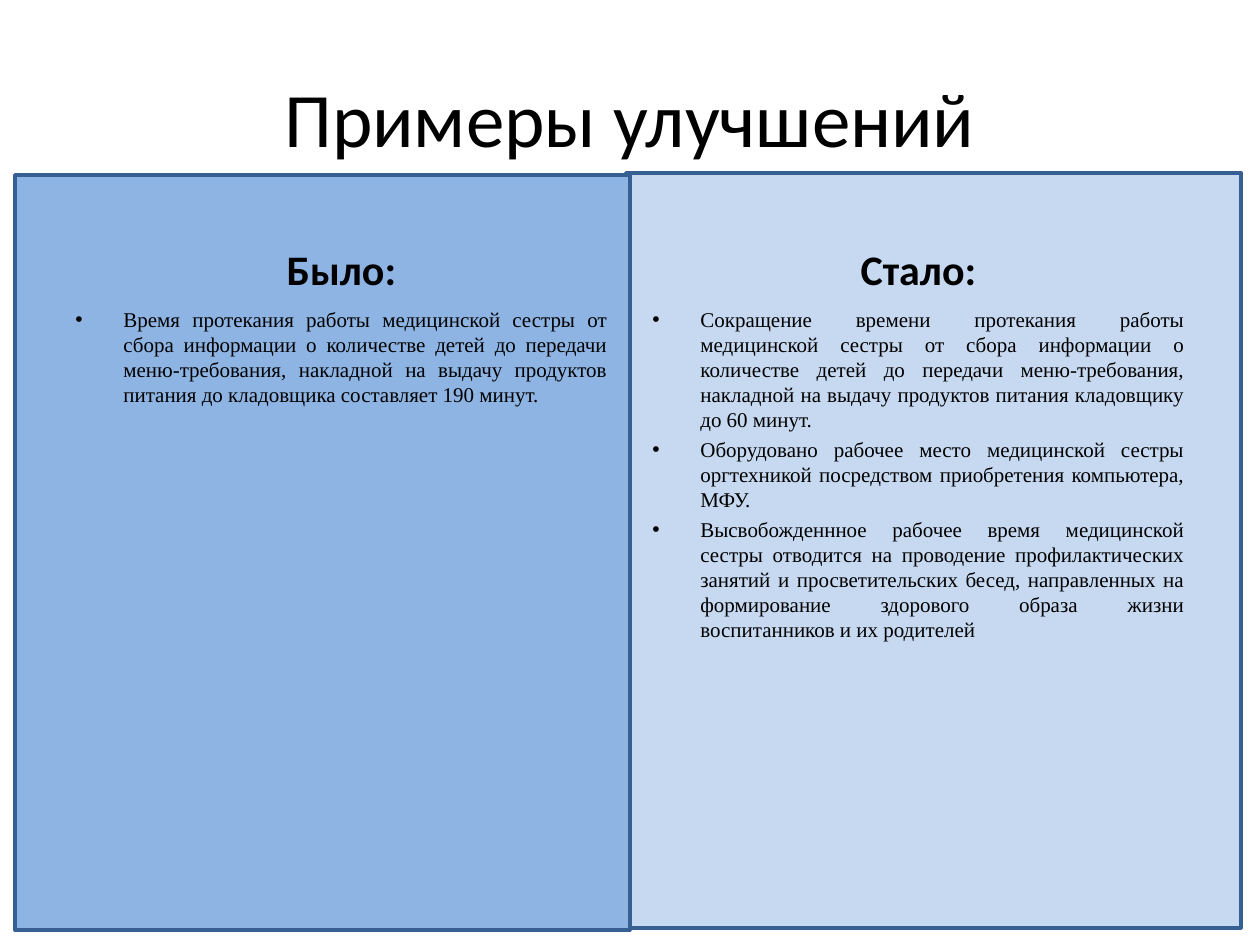
from lxml.etree import SubElement
from pptx import Presentation
from pptx.dml.color import RGBColor
from pptx.enum.shapes import MSO_SHAPE
from pptx.enum.text import MSO_ANCHOR, PP_ALIGN
from pptx.oxml.ns import qn
from pptx.util import Emu, Pt

TITLE = "Примеры улучшений"
PANELS = [
    {"left": 626, "top": 173, "fill": "C6D9F1"},
    {"left": 15, "top": 175, "fill": "8EB4E3"},
]
PANEL_SIZE = (615, 755)
COLUMNS = [
    {
        "left": 63,
        "heading": "Было:",
        "points": [
            "Время протекания работы медицинской сестры от сбора информации о количестве детей до передачи меню-требования, накладной на выдачу продуктов питания до кладовщика составляет 190 минут.",
        ],
    },
    {
        "left": 640,
        "heading": "Стало:",
        "points": [
            "Сокращение времени протекания работы медицинской сестры от сбора информации о количестве детей до передачи меню-требования, накладной на выдачу продуктов питания кладовщику до 60 минут.",
            "Оборудовано рабочее место медицинской сестры оргтехникой посредством приобретения компьютера, МФУ.",
            "Высвобожденнное рабочее время медицинской сестры отводится на проводение профилактических занятий и просветительских бесед, направленных на формирование здорового образа жизни воспитанников и их родителей",
        ],
    },
]
COLUMN_WIDTH = 557
HEADING_TOP, POINTS_TOP, POINTS_HEIGHT = 186, 300, 544
INDENT = 48


def px(length):
    """Turn whole pixels into EMU."""
    return Emu(round(length * 914400 / 126))


def color(value):
    """Turn a hex string into a colour."""
    return RGBColor.from_string(value)


def add_panel(page, left, top, fill):
    """Draw one outlined background panel."""
    panel = page.shapes.add_shape(MSO_SHAPE.RECTANGLE, *map(px, (left, top, *PANEL_SIZE)))
    panel.shadow.inherit = False
    panel.fill.solid()
    panel.fill.fore_color.rgb = color(fill)
    panel.line.color.rgb = color("376092")
    panel.line.width = Pt(2)


def add_bullet(para):
    """Give a paragraph a bullet with a hanging indent."""
    properties = para._p.get_or_add_pPr()
    properties.set("marL", str(px(INDENT)))
    properties.set("indent", str(-px(INDENT)))
    SubElement(properties, qn("a:buFont"), typeface="Arial")
    SubElement(properties, qn("a:buChar"), char="•")


def add_text(page, frame, texts, size, font="Calibri", bold=False,
             align=PP_ALIGN.CENTER, anchor=MSO_ANCHOR.MIDDLE, bullets=False):
    """Place paragraphs in a wrapped text box."""
    box = page.shapes.add_textbox(*map(px, frame)).text_frame
    box.word_wrap = True
    box.vertical_anchor = anchor
    for index, text in enumerate(texts):
        para = box.paragraphs[0] if index == 0 else box.add_paragraph()
        if bullets:
            add_bullet(para)
        para.alignment = align
        if index:
            para.space_before = Pt(size * 0.2)
        span = para.add_run()
        span.text = text
        span.font.size = Pt(size)
        span.font.name = font
        span.font.bold = bold
        span.font.color.rgb = color("000000")


def main():
    """Build the comparison slide."""
    deck = Presentation()
    deck.slide_width, deck.slide_height = px(1260), px(945)
    page = deck.slides.add_slide(deck.slide_layouts[6])
    for panel in PANELS:
        add_panel(page, **panel)
    add_text(page, (63, 38, 1134, 157), [TITLE], size=44)
    for column in COLUMNS:
        left = column["left"]
        add_text(page, (left, HEADING_TOP, COLUMN_WIDTH, POINTS_TOP - HEADING_TOP),
                 [column["heading"]], size=24, bold=True, anchor=MSO_ANCHOR.BOTTOM)
        add_text(page, (left, POINTS_TOP, COLUMN_WIDTH, POINTS_HEIGHT), column["points"],
                 size=12, font="Times New Roman", align=PP_ALIGN.JUSTIFY,
                 anchor=MSO_ANCHOR.TOP, bullets=True)
    deck.save("out.pptx")


if __name__ == "__main__":
    main()
